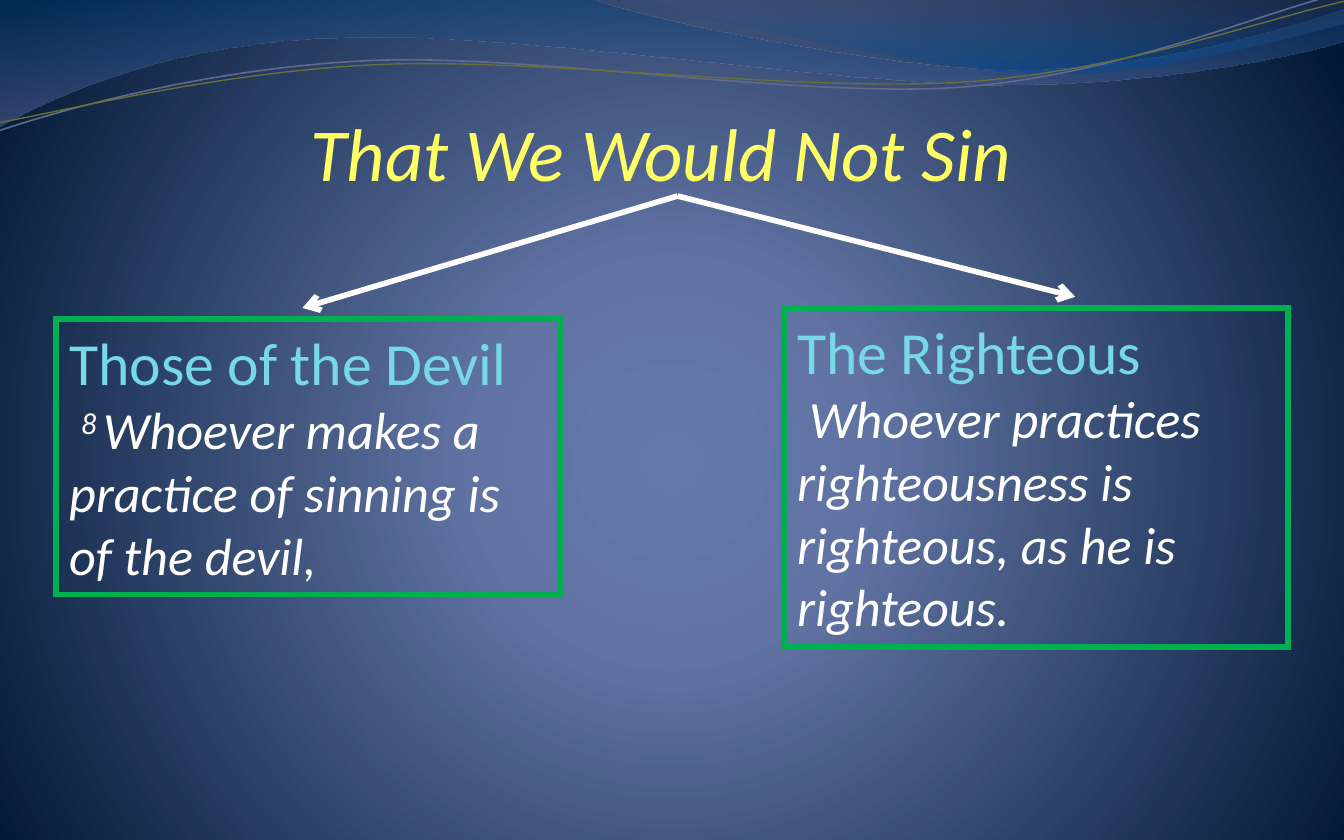
from math import cos, radians, sin

from lxml.etree import SubElement
from pptx import Presentation
from pptx.dml.color import RGBColor as RGB
from pptx.enum.shapes import MSO_CONNECTOR as Link, MSO_SHAPE as Shape
from pptx.enum.text import MSO_ANCHOR as Anchor, MSO_AUTO_SIZE as Fit, PP_ALIGN as Align
from pptx.oxml import parse_xml
from pptx.oxml.ns import nsdecls, qn
from pptx.util import Inches, Pt

COLORS = {
    "title": "FFFF66", "heading": "77D9E8", "body": "FFFFFF",
    "frame": "00B050", "arrow": "FFFFFF",
    "glow": "6379AE", "mist": "6073A3", "night": "001733",
    "wave_blue": "074278", "wave_violet": "5C629D",
    "crest_violet": "4F537B", "crest_blue": "004F98",
    "line_violet": "65688D", "line_olive": "686F3A",
}

deck = Presentation()
deck.slide_width, deck.slide_height = Inches(10), Inches(6.25)
page = deck.slides.add_slide(deck.slide_layouts[6])
cell = deck.slide_width / 24        # square grid: 24 columns, 15 rows
share = deck.slide_width / 100      # wave points: hundredths of the width


def set_gradient(parent, stops, direction):
    """Swap the solid fill of parent for a gradient of (position, colour, opacity)."""
    marks = ""
    for pos, name, opacity in stops:
        alpha = f'<a:alpha val="{opacity * 1000}"/>' if opacity < 100 else ""
        marks += (f'<a:gs pos="{pos * 1000}"><a:srgbClr val="{COLORS[name]}">'
                  f'{alpha}</a:srgbClr></a:gs>')
    gradient = parse_xml(f'<a:gradFill {nsdecls("a")} rotWithShape="1">'
                         f'<a:gsLst>{marks}</a:gsLst>{direction}</a:gradFill>')
    parent.replace(parent.find(qn("a:solidFill")), gradient)


def add_spans(para, spans):
    """Add (text, format) spans; a text of None is a line break."""
    for text, formats in spans:
        if text is None:
            para.add_line_break()
            continue
        span = para.add_run()
        span.text = text
        span.font.color.rgb = RGB.from_string(COLORS[formats["color"]])
        for key, value in formats["font"].items():
            setattr(span.font, key, value)
        if "raised" in formats:
            span.font._element.set("baseline", str(formats["raised"] * 1000))


# Background
page.background.fill.solid()
set_gradient(page._element.find(".//" + qn("p:bgPr")),
             [(0, "glow", 100), (25, "mist", 100), (100, "night", 100)],
             '<a:path path="circle"><a:fillToRect l="10000" t="110000" '
             'r="10000" b="100000"/></a:path>')

# Waves: a segment is a line end (2 numbers) or a Bezier curve (6 numbers)
waves = [
    {"start": (-0.1, 0), "stops": [(0, "wave_blue", 45), (100, "wave_violet", 55)],
     "segments": [(44, -0.1), (47.6, 1.4, 66.4, 5.2, 75.8, 5.2),
                  (85.3, 5.2, 95.8, 2.1, 100, 0.7), (100.1, 3),
                  (98.3, 3.7, 87, 6.3, 74.6, 6.3), (62.2, 6.3, 38.2, 2.3, 25.7, 2.8),
                  (12.9, 3, 4.6, 6.9, -0.1, 9.4)]},
    {"start": (47.9, -0.1), "stops": [(0, "crest_violet", 30), (80, "crest_blue", 45)],
     "segments": [(50.9, 1, 68.2, 5.1, 76.9, 5.4),
                  (85.6, 5.8, 96.1, 2.7, 100, 1.8), (100, 0)]},
    {"start": (0, 9.7), "line": ("line_violet", 0.85), "turn": -2.7, "pivot": (49.9, 4.75),
     "segments": [(4.8, 8.1, 15.8, 5, 27.7, 4.5), (39.5, 4, 59.2, 7.3, 71.3, 6.5),
                  (83.3, 5.6, 93.9, 0.9, 99.8, -0.5)]},
    {"start": (0, 9.1), "line": ("line_olive", 0.75), "turn": -2.7, "pivot": (49.95, 4.9),
     "segments": [(4.7, 8.3, 16.4, 5.3, 28.3, 4.8), (40.3, 4.3, 59.7, 6.9, 71.7, 6.1),
                  (83.6, 5.3, 94.1, 1.4, 100, 0.1)]},
]
for wave in waves:
    points = [wave["start"]]
    for segment in wave["segments"]:
        points += zip(segment[::2], segment[1::2])
    # Level the points about the pivot; the shape's rotation tilts them again
    turn = wave.get("turn", 0)
    c, s = cos(radians(-turn)), sin(radians(-turn))
    px, py = wave.get("pivot", (0, 0))
    points = [((px + (x - px) * c - (y - py) * s) * share,
               (py + (x - px) * s + (y - py) * c) * share) for x, y in points]
    builder = page.shapes.build_freeform(*points[0])
    builder.add_line_segments(points[1:], close="stops" in wave)
    shape = builder.convert_to_shape()
    shape.rotation = turn
    shape.shadow.inherit = False
    # Join each three lines of a curve into one Bezier command
    outline = shape._element.find(".//" + qn("a:path"))
    lines = iter(outline.findall(qn("a:lnTo")))
    for segment in wave["segments"]:
        curve = next(lines)
        if len(segment) == 6:
            curve.tag = qn("a:cubicBezTo")
            for extra in (next(lines), next(lines)):
                curve.append(extra[0])
                outline.remove(extra)
    if "stops" in wave:
        shape.fill.solid()
        set_gradient(shape._element.spPr, wave["stops"], '<a:lin ang="5400000" scaled="1"/>')
        shape.line.fill.background()
    else:
        color, width = wave["line"]
        shape.fill.background()
        shape.line.color.rgb = RGB.from_string(COLORS[color])
        shape.line.width = Pt(width)

# Text formats
title = {"color": "title", "font": {"name": "Calibri", "size": Pt(40), "italic": True}}
heading = {"color": "heading", "font": {"name": "Calibri", "size": Pt(32)}}
verse = {"color": "body", "font": {"name": "Calibri", "size": Pt(28), "italic": True}}
number = {**verse, "raised": 30}

# Framed boxes: column, row, height in rows, spans
boxes = [
    (14, 5.5, 6.05, [
        ("The Righteous", heading), (None, None),
        (" Whoever practices righteousness is righteous, as he is righteous.", verse)]),
    (1, 5.7, 4.92, [
        ("Those of the Devil", heading), (None, None), (" ", verse), ("8 ", number),
        ("Whoever makes a practice of sinning is of the devil,", verse)]),
]
for column, row, rows, spans in boxes:
    box = page.shapes.add_shape(
        Shape.RECTANGLE, *(round(n * cell) for n in (column, row, 9, rows)))
    box.shadow.inherit = False
    box.fill.background()
    box.line.color.rgb = RGB.from_string(COLORS["frame"])
    box.line.width = Pt(3)
    SubElement(box.line._get_or_add_ln(), qn("a:miter"), lim="800000")
    for key, value in {"word_wrap": True, "vertical_anchor": Anchor.TOP,
                       "auto_size": Fit.SHAPE_TO_FIT_TEXT}.items():
        setattr(box.text_frame, key, value)
    para = box.text_frame.paragraphs[0]
    para.alignment = Align.LEFT
    add_spans(para, spans)

# Title, with a right inset that shifts it left of the box centre
box = page.shapes.add_textbox(*(round(n * cell) for n in (1, 1.5, 22.2, 2)))
for key, value in {"word_wrap": True, "vertical_anchor": Anchor.BOTTOM,
                   "margin_left": 0, "margin_right": Inches(0.25),
                   "margin_top": Inches(0.05), "margin_bottom": 0}.items():
    setattr(box.text_frame, key, value)
para = box.text_frame.paragraphs[0]
para.alignment = Align.CENTER
add_spans(para, [("That We Would Not Sin", title)])

# Arrows from the title to both boxes
for end in [(5.4, 5.5), (19.2, 5.3)]:
    arrow = page.shapes.add_connector(
        Link.STRAIGHT, *(round(n * cell) for n in (12.1, 3.5, *end)))
    arrow.line.color.rgb = RGB.from_string(COLORS["arrow"])
    arrow.line.width = Pt(3)
    SubElement(arrow.line._get_or_add_ln(), qn("a:tailEnd"), type="arrow")
    SubElement(arrow._element.spPr, qn("a:effectLst"))

deck.save("out.pptx")
